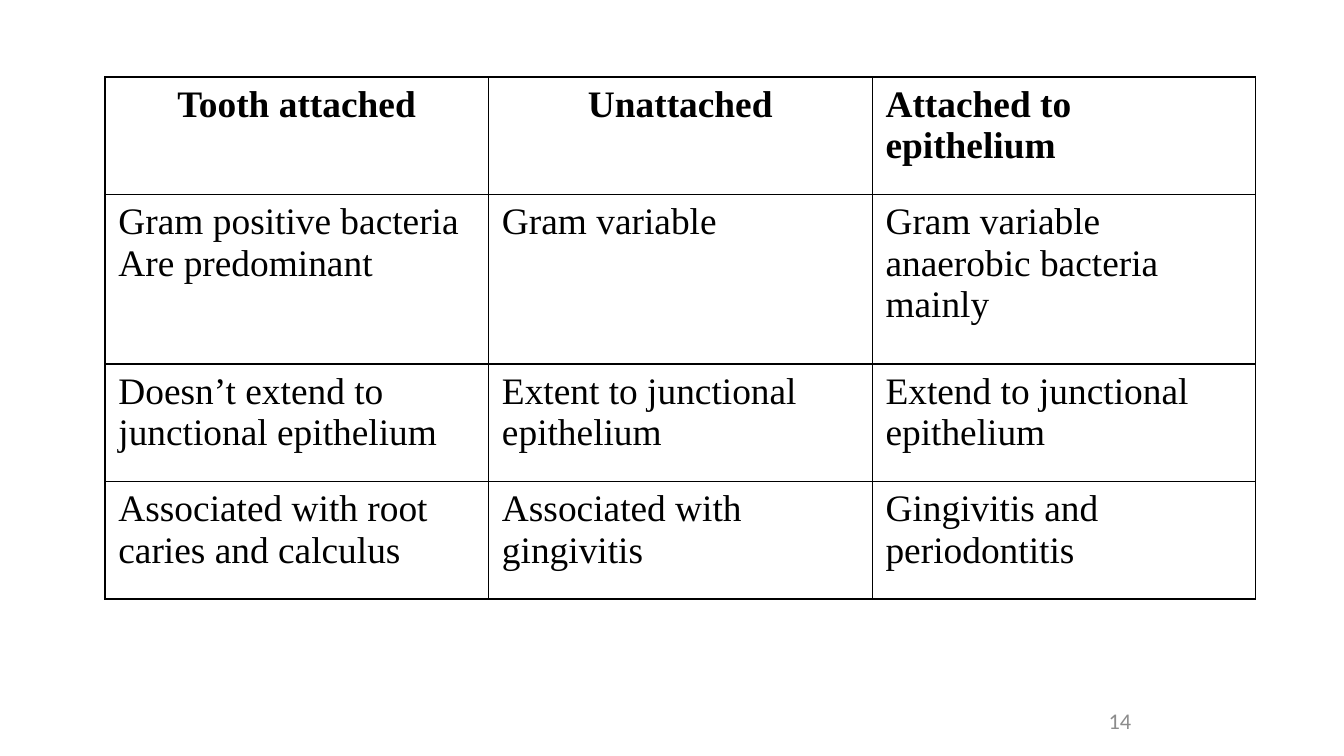
from dataclasses import dataclass

from lxml import etree
from pptx import Presentation
from pptx.dml.color import RGBColor
from pptx.enum.text import MSO_ANCHOR, PP_ALIGN
from pptx.oxml.ns import qn
from pptx.util import Pt

PX = 9525  # EMU per px at 96 px to the inch
CENTER, LEFT = PP_ALIGN.CENTER, PP_ALIGN.LEFT
MIDDLE = MSO_ANCHOR.MIDDLE
BLANK_LAYOUT = 6


@dataclass(frozen=True)
class Theme:
    ink: str = "000000"
    muted: str = "8C8C8C"
    table_font: str = "Times New Roman"
    number_font: str = "Calibri"
    table_size: int = 20
    number_size: int = 12
    border_width: float = 0.75


THEME = Theme()
COLUMN_WIDTH = 274
ROW_HEIGHTS = [84, 121, 84, 84]
ROWS = [
    ["Tooth attached", "Unattached", "Attached to epithelium"],
    ["Gram positive bacteria\nAre predominant", "Gram variable",
     "Gram variable anaerobic bacteria mainly"],
    ["Doesn’t extend to junctional epithelium",
     "Extent to junctional epithelium", "Extend to junctional epithelium"],
    ["Associated with root caries and calculus",
     "Associated with gingivitis", "Gingivitis and periodontitis"],
]


def format_text(text_frame, color, alignment, **font_format):
    for paragraph in text_frame.paragraphs:
        paragraph.alignment = alignment
        for name, value in font_format.items():
            setattr(paragraph.font, name, value)
        paragraph.font.color.rgb = RGBColor.from_string(color)


def add_borders(cell):
    """Outline all four sides; lines must come before the fill in tcPr."""
    properties = cell._tc.get_or_add_tcPr()
    for position, side in enumerate(("lnL", "lnR", "lnT", "lnB")):
        line = etree.Element(qn(f"a:{side}"), w=str(Pt(THEME.border_width)))
        fill = etree.SubElement(line, qn("a:solidFill"))
        etree.SubElement(fill, qn("a:srgbClr"), val=THEME.ink)
        properties.insert(position, line)


presentation = Presentation()
presentation.slide_width = 960 * PX
presentation.slide_height = 540 * PX
slide = presentation.slides.add_slide(presentation.slide_layouts[BLANK_LAYOUT])

# Comparison table
column_count = len(ROWS[0])
table = slide.shapes.add_table(
    len(ROWS), column_count, 75 * PX, 55 * PX,
    column_count * COLUMN_WIDTH * PX, sum(ROW_HEIGHTS) * PX).table
table.first_row = False
table.horz_banding = False
for column in table.columns:
    column.width = COLUMN_WIDTH * PX

for row_index, (row_texts, height) in enumerate(zip(ROWS, ROW_HEIGHTS)):
    table.rows[row_index].height = height * PX
    is_header = row_index == 0
    for column_index, text in enumerate(row_texts):
        cell = table.cell(row_index, column_index)
        cell.text = text
        cell.fill.background()
        add_borders(cell)
        centered = is_header and column_index < column_count - 1
        format_text(cell.text_frame, THEME.ink, CENTER if centered else LEFT,
                    name=THEME.table_font, size=Pt(THEME.table_size), bold=is_header)

# Slide number
number_box = slide.shapes.add_textbox(688 * PX, 500 * PX, 224 * PX, 29 * PX)
number_frame = number_box.text_frame
number_frame.word_wrap = True
number_frame.vertical_anchor = MIDDLE
number_frame.text = "14"
format_text(number_frame, THEME.muted, CENTER,
            name=THEME.number_font, size=Pt(THEME.number_size))

presentation.save("out.pptx")
